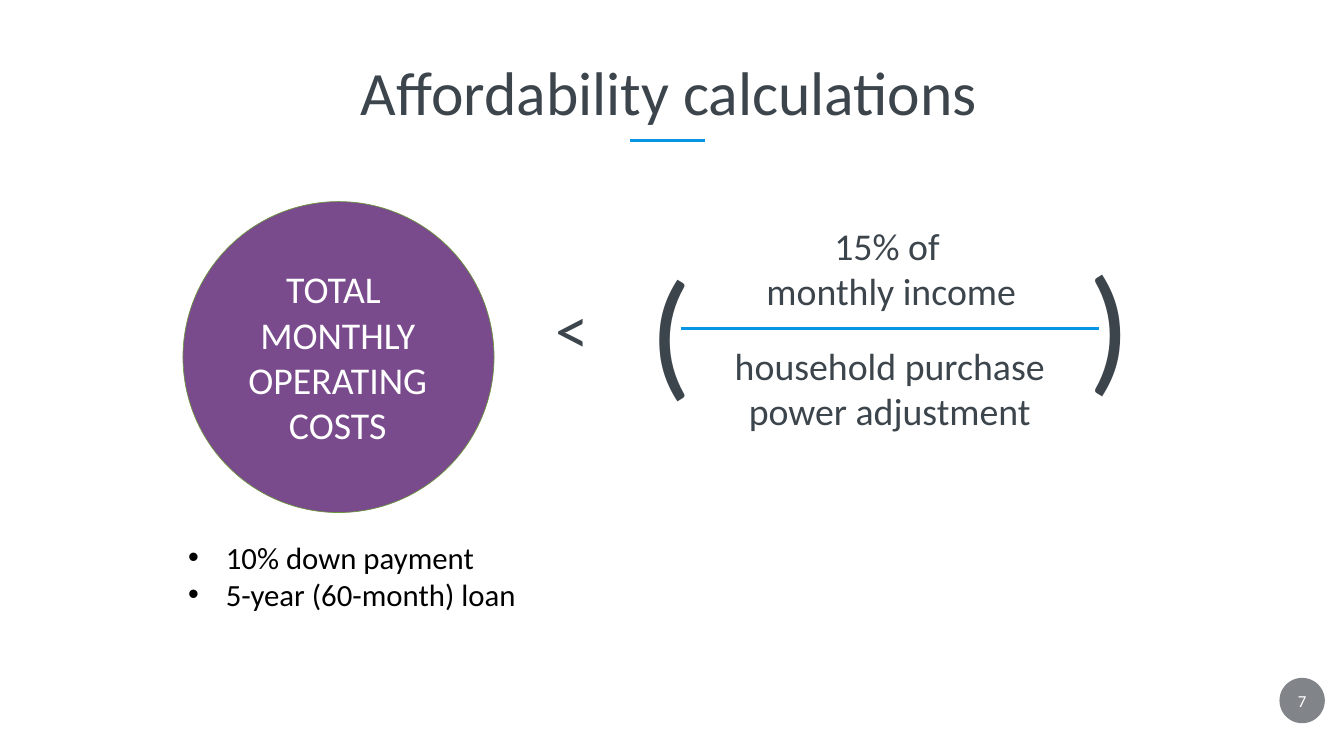
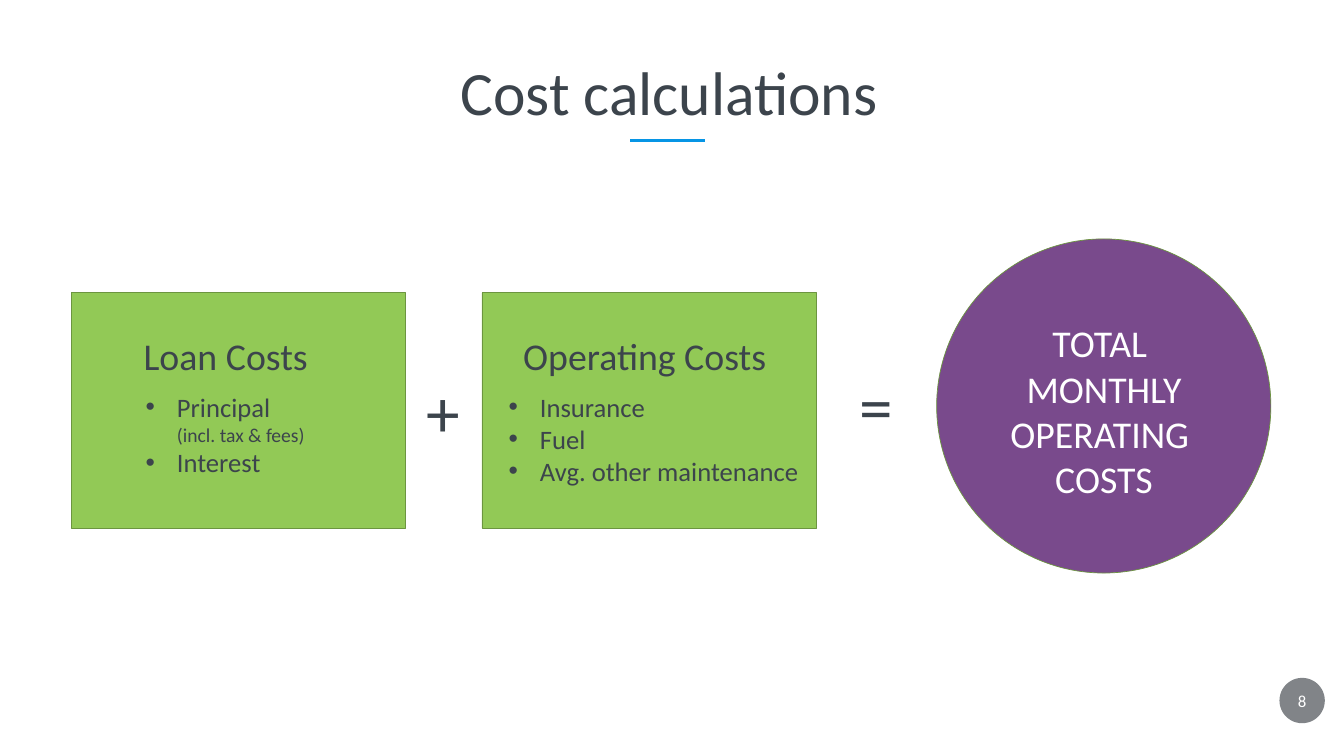
from dataclasses import dataclass

from lxml import etree
from pptx import Presentation
from pptx.dml.color import RGBColor
from pptx.enum.shapes import MSO_CONNECTOR, MSO_SHAPE
from pptx.enum.text import MSO_ANCHOR, MSO_AUTO_SIZE, PP_ALIGN
from pptx.oxml.ns import qn
from pptx.util import Inches, Pt

LEFT, CENTER = PP_ALIGN.LEFT, PP_ALIGN.CENTER
TOP, MIDDLE, BOTTOM = MSO_ANCHOR.TOP, MSO_ANCHOR.MIDDLE, MSO_ANCHOR.BOTTOM
GROW, FIXED = MSO_AUTO_SIZE.SHAPE_TO_FIT_TEXT, MSO_AUTO_SIZE.NONE
OVAL, RECTANGLE = MSO_SHAPE.OVAL, MSO_SHAPE.RECTANGLE
STRAIGHT = MSO_CONNECTOR.STRAIGHT


@dataclass(frozen=True)
class Theme:
    font: str = "Calibri"
    ink: str = "3C444C"
    white: str = "FFFFFF"
    black: str = "000000"
    blue: str = "0695E5"
    purple: str = "794A8C"
    green: str = "92C956"
    edge: str = "6C9540"
    badge: str = "2D3339"
    title: int = 88
    label: int = 54
    sign: int = 96
    bracket: int = 200
    terms: int = 44
    item: int = 38
    note: int = 28
    number: int = 24


THEME = Theme()
WIDTH, HEIGHT = 26.66, 15
TITLE_AREA = (1.5, 0.82, 23.54, 1.79)
TITLE_RULE = (12.5, 13.99, 2.79)
BADGE_AREA = (25.38, 13.45, 0.9, 0.9)
NUMBER_AREA = (25.38, 13.5, 0.9, 0.8)
SIGN_SIZE = (1.29, 1.72)
BRACKET_SIZE = (3.99, 3.47)

STYLES = {
    "title": dict(size=THEME.title, color=THEME.ink, align=CENTER, anchor=BOTTOM, spacing=0.9),
    "number": dict(size=THEME.number, color=THEME.white, align=CENTER, anchor=MIDDLE),
    "total": dict(size=THEME.label, color=THEME.white, align=CENTER, anchor=MIDDLE, grow=True),
    "term": dict(size=THEME.label, color=THEME.ink, align=CENTER, anchor=MIDDLE, grow=True),
    "heading": dict(size=THEME.label, color=THEME.ink, anchor=MIDDLE, grow=True),
    "sign": dict(size=THEME.sign, color=THEME.ink, grow=True),
    "bracket": dict(size=THEME.bracket, color=THEME.ink, grow=True),
    "loan terms": dict(size=THEME.terms, color=THEME.black, indent=0.75),
    "cost items": dict(size=THEME.item, color=THEME.ink, indent=0.62),
}

SLIDES = [
    dict(
        number=7,
        layout=1,
        title="Affordability calculations",
        shapes=[(OVAL, THEME.purple, (3.63, 4, 6.17, 6.17))],
        rules=[(13.5, 21.8, 6.52)],
        texts=[
            ("total", (4.64, 5.21, 4.12, 3.74), ["TOTAL ", "MONTHLY", "OPERATING", "COSTS"]),
            ("sign", (10.92, 5.66, *SIGN_SIZE), ["<"]),
            ("term", (13.56, 4.35, 8.24, 1.92), ["15% of ", "monthly income"]),
            ("term", (13.5, 6.74, 8.3, 1.92), ["household purchase power adjustment"]),
            ("bracket", (21.5, 4.66, *BRACKET_SIZE), [")"]),
            ("bracket", (12.78, 4.76, *BRACKET_SIZE), ["("]),
        ],
        lists=[
            ("loan terms", (3.63, 10.64, 13.33, 1.58),
             ["10% down payment", "5-year (60-month) loan"]),
        ],
    ),
    dict(
        number=8,
        layout=3,
        title="Cost calculations",
        shapes=[
            (RECTANGLE, THEME.green, (9.56, 5.81, 6.63, 4.67)),
            (OVAL, THEME.purple, (18.58, 4.74, 6.63, 6.63)),
            (RECTANGLE, THEME.green, (1.42, 5.81, 6.63, 4.67)),
        ],
        rules=[],
        texts=[
            ("heading", (2.75, 6.54, 3.67, 1.01), ["Loan Costs"]),
            ("heading", (10.28, 6.54, 5.28, 1.01), ["Operating Costs"]),
            ("sign", (8.37, 7.3, *SIGN_SIZE), ["+"]),
            ("sign", (16.96, 7.18, *SIGN_SIZE), ["="]),
            ("total", (18.71, 6.28, 6.38, 3.74), ["TOTAL ", "MONTHLY OPERATING ", "COSTS"]),
        ],
        lists=[
            ("cost items", (2.79, 7.7, 6.79, 1.85),
             [("Principal ", "(incl. tax & fees)"), "Interest"]),
            ("cost items", (9.99, 7.7, 6.63, 2.02),
             ["Insurance", "Fuel", "Avg. other maintenance"]),
        ],
    ),
]


def apply(target, values):
    for name, value in values.items():
        setattr(target, name, value)


def inches(area):
    return [Inches(length) for length in area]


def add_bullet(para, indent):
    props = para._p.get_or_add_pPr()
    apply_indent = {"marL": Inches(indent), "indent": -Inches(indent)}
    for name, value in apply_indent.items():
        props.set(name, str(value))
    etree.SubElement(props, qn("a:buFont"), typeface="Arial")
    etree.SubElement(props, qn("a:buChar"), char="•")


def add_span(para, text, size, color):
    span = para.add_run()
    span.text = text
    apply(span.font, dict(name=THEME.font, size=Pt(size), bold=False))
    span.font.color.rgb = RGBColor.from_string(color)


def write(box, style, lines):
    frame = box.text_frame
    apply(frame, dict(
        word_wrap=True,
        auto_size=GROW if style.get("grow") else FIXED,
        vertical_anchor=style.get("anchor", TOP),
    ))
    for index, line in enumerate(lines):
        para = frame.add_paragraph() if index else frame.paragraphs[0]
        apply(para, dict(
            alignment=style.get("align", LEFT),
            line_spacing=style.get("spacing", 1.0),
            space_before=Pt(0),
        ))
        if "indent" in style:
            add_bullet(para, style["indent"])
        main, *notes = (line,) if isinstance(line, str) else line
        add_span(para, main, style["size"], style["color"])
        for note in notes:
            para.add_line_break()
            add_span(para, note, THEME.note, style["color"])


def fill_placeholder(box, area, style, lines):
    names = ("left", "top", "width", "height")
    apply(box, dict(zip(names, inches(area))))
    write(box, style, lines)
    box.element.getparent().append(box.element)


def add_text(page, area, style, lines):
    write(page.shapes.add_textbox(*inches(area)), style, lines)


def add_solid(page, kind, color, area, edge=THEME.edge):
    shape = page.shapes.add_shape(kind, *inches(area))
    shape.shadow.inherit = False
    shape.fill.solid()
    shape.fill.fore_color.rgb = RGBColor.from_string(color)
    if edge:
        shape.line.color.rgb = RGBColor.from_string(edge)
        shape.line.width = Pt(1)
    else:
        shape.line.fill.background()
    return shape


def add_rule(page, rule, weight):
    start, end, y = rule
    line = page.shapes.add_connector(STRAIGHT, *inches((start, y, end, y)))
    line.line.color.rgb = RGBColor.from_string(THEME.blue)
    line.line.width = Pt(weight)
    etree.SubElement(line.element.spPr, qn("a:effectLst"))


def add_frame(page, number, title):
    badge = add_solid(page, OVAL, THEME.badge, BADGE_AREA, edge=None)
    color = badge.element.spPr.find(".//" + qn("a:srgbClr"))
    etree.SubElement(color, qn("a:alpha"), val="60000")
    add_rule(page, TITLE_RULE, 3.6)
    add_text(page, NUMBER_AREA, STYLES["number"], [str(number)])
    fill_placeholder(page.shapes.title, TITLE_AREA, STYLES["title"], [title])


def build_page(deck, content):
    page = deck.slides.add_slide(deck.slide_layouts[content["layout"]])
    bodies = [box for box in page.placeholders if box.placeholder_format.idx > 0]
    add_frame(page, content["number"], content["title"])
    for kind, color, area in content["shapes"]:
        add_solid(page, kind, color, area)
    for rule in content["rules"]:
        add_rule(page, rule, 4.5)
    for role, area, lines in content["texts"]:
        add_text(page, area, STYLES[role], lines)
    for body, (role, area, lines) in zip(bodies, content["lists"]):
        fill_placeholder(body, area, STYLES[role], lines)


def main():
    deck = Presentation()
    apply(deck, dict(slide_width=Inches(WIDTH), slide_height=Inches(HEIGHT)))
    for content in SLIDES:
        build_page(deck, content)
    deck.save("out.pptx")


if __name__ == "__main__":
    main()
